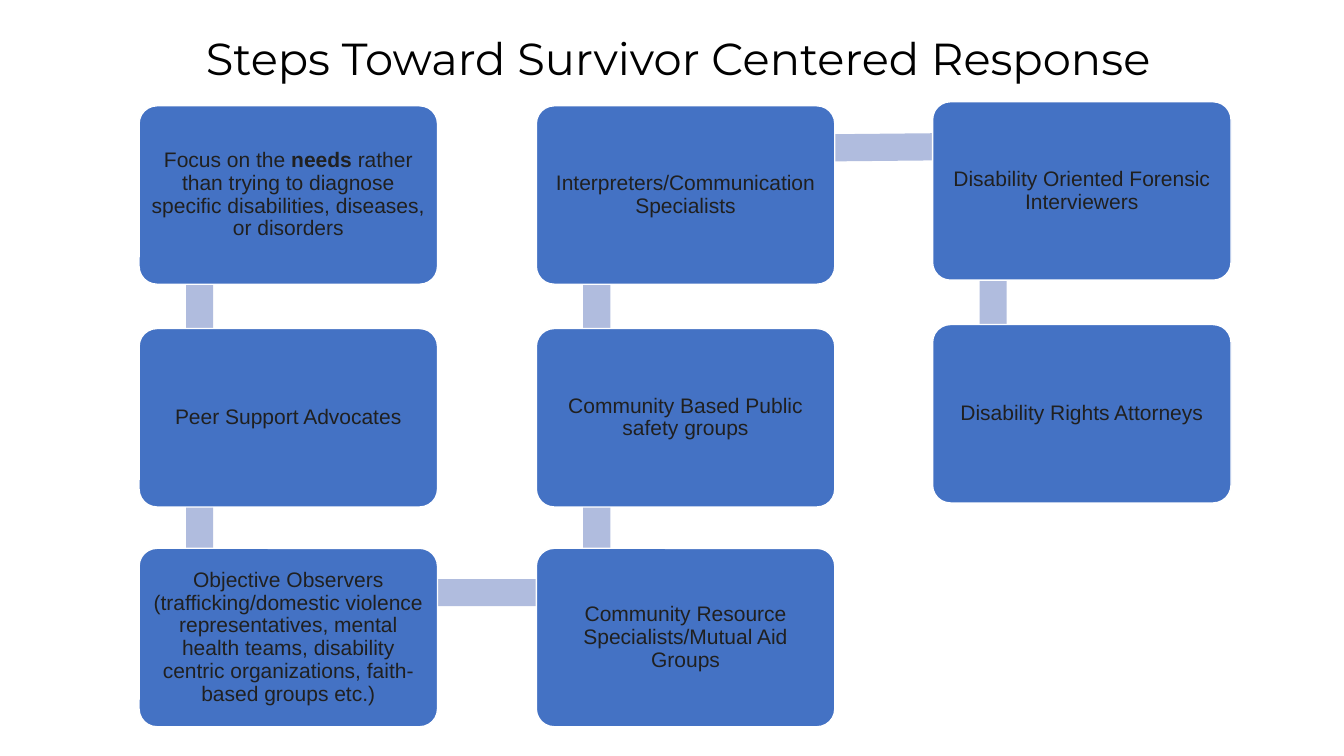
from math import atan2, degrees, hypot

from pptx import Presentation
from pptx.dml.color import RGBColor
from pptx.enum.shapes import MSO_SHAPE
from pptx.enum.text import MSO_ANCHOR, MSO_AUTO_SIZE, PP_ALIGN
from pptx.util import Inches, Pt

RECTANGLE = MSO_SHAPE.RECTANGLE
ROUNDED = MSO_SHAPE.ROUNDED_RECTANGLE
MIDDLE = MSO_ANCHOR.MIDDLE
CENTER = PP_ALIGN.CENTER
NO_AUTOFIT = MSO_AUTO_SIZE.NONE

STEP_WIDTH, STEP_HEIGHT = 2.96, 1.77
COLUMNS = [1.38, 5.32, 9.25]
LINK_X, LINK_Y = 0.6, 0.44  # where a link meets a step, from its corner
LINK_THICKNESS = 0.27


def rgb(value):
    return RGBColor.from_string(value)


def add_block(kind, left, top, width, height, fill):
    block = slide.shapes.add_shape(
        kind, Inches(left), Inches(top), Inches(width), Inches(height))
    block.shadow.inherit = False
    block.fill.solid()
    block.fill.fore_color.rgb = rgb(fill)
    block.line.fill.background()
    return block


prs = Presentation()
prs.slide_width, prs.slide_height = Inches(13.33), Inches(7.5)
slide = prs.slides.add_slide(prs.slide_layouts[5])
slide.background.fill.solid()
slide.background.fill.fore_color.rgb = rgb("FFFFFF")

# Title
title = slide.shapes.title
title.left, title.top = Inches(0.98), Inches(0.2)
title.width, title.height = Inches(11.5), Inches(0.8)
title.text = "Steps Toward Survivor Centered Response"
title.text_frame.auto_size = NO_AUTOFIT
title.text_frame.vertical_anchor = MIDDLE
heading = title.text_frame.paragraphs[0]
heading.alignment = CENTER
heading.line_spacing = 0.9
heading.font.name = "Montserrat"
heading.font.size = Pt(32)
heading.font.color.rgb = rgb("000000")

# Steps in reading order: column, top, runs as (text, bold)
steps = [
    (0, 1.05, [("Focus on the ", False), ("needs", True),
               (" rather than trying to diagnose specific disabilities, "
                "diseases, or disorders", False)]),
    (0, 3.26, [("Peer Support Advocates", False)]),
    (0, 5.44, [("Objective Observers (trafficking/domestic violence "
                "representatives, mental health teams, disability centric "
                "organizations, faith-based groups etc.)", False)]),
    (1, 5.44, [("Community Resource Specialists/Mutual Aid Groups", False)]),
    (1, 3.26, [("Community Based Public safety groups", False)]),
    (1, 1.05, [("Interpreters/Communication Specialists", False)]),
    (2, 1.01, [("Disability Oriented Forensic Interviewers", False)]),
    (2, 3.22, [("Disability Rights Attorneys", False)]),
]

# Links from each step to the next, behind the steps
for (column, top, _), (next_column, next_top, _) in zip(steps, steps[1:]):
    run_x = COLUMNS[next_column] - COLUMNS[column]
    run_y = next_top - top
    length = hypot(run_x, run_y)
    center_x = COLUMNS[column] + LINK_X + run_x / 2
    center_y = top + LINK_Y + run_y / 2
    link = add_block(RECTANGLE, center_x - length / 2,
                     center_y - LINK_THICKNESS / 2,
                     length, LINK_THICKNESS, "B0BCDE")
    link.rotation = degrees(atan2(run_y, run_x))

# Step boxes
for column, top, wording in steps:
    step = add_block(ROUNDED, COLUMNS[column], top,
                     STEP_WIDTH, STEP_HEIGHT, "4472C4")
    step.adjustments[0] = 0.1
    step.line.color.rgb = rgb("FFFFFF")
    step.line.width = Pt(1)
    frame = step.text_frame
    frame.word_wrap = True
    frame.vertical_anchor = MIDDLE
    frame.margin_left = frame.margin_right = Inches(0.06)
    frame.margin_top = frame.margin_bottom = Inches(0.06)
    label = frame.paragraphs[0]
    label.alignment = CENTER
    label.line_spacing = 0.9
    label.font.name = "Arial"
    label.font.size = Pt(15)
    label.font.color.rgb = rgb("202020")
    for text, bold in wording:
        run = label.add_run()
        run.text = text
        if bold:
            run.font.bold = True

prs.save("out.pptx")
